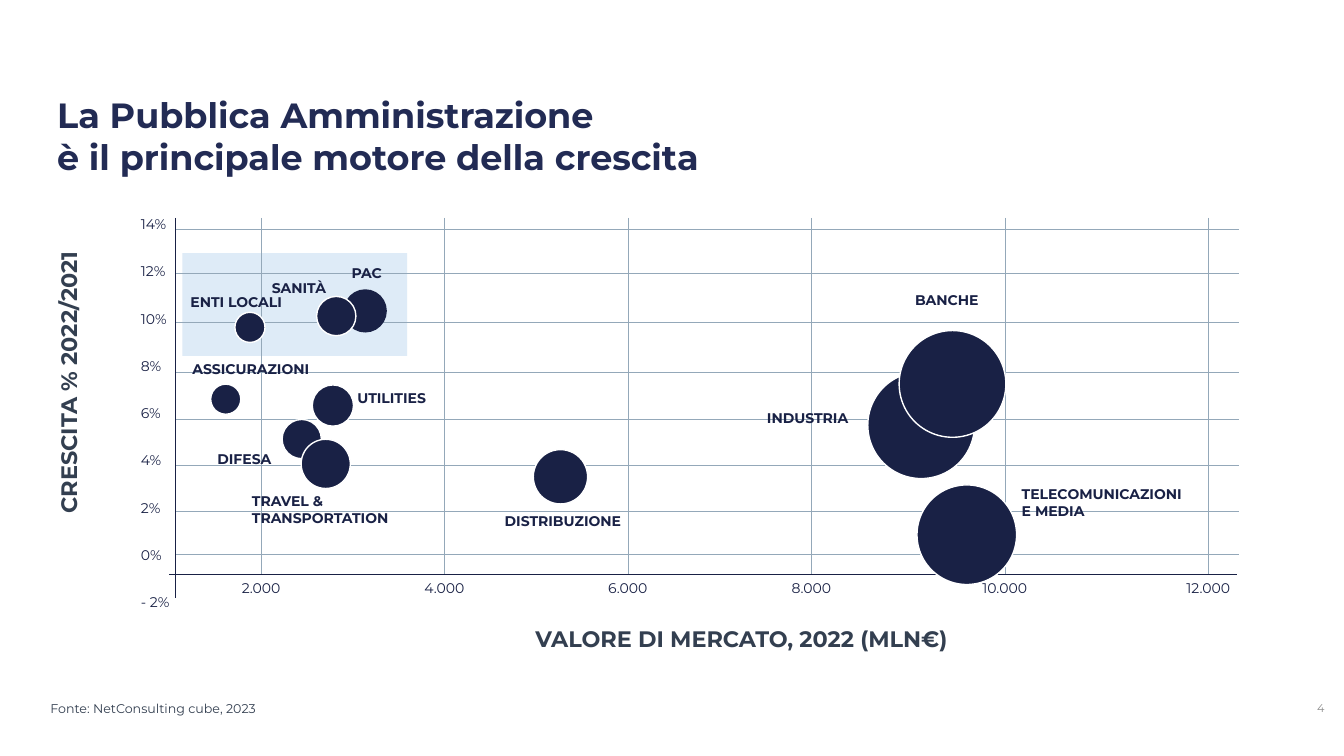
import pptx
import pptx.util
import pptx.dml.color
import pptx.enum.dml
import pptx.enum.shapes
import pptx.enum.text
from lxml import etree

Cm, Pt = pptx.util.Cm, pptx.util.Pt
RGBColor = pptx.dml.color.RGBColor
ALIGN = pptx.enum.text.PP_ALIGN
SHAPE = pptx.enum.shapes.MSO_SHAPE

NAVY = RGBColor(0x19, 0x21, 0x45)
INDIGO = RGBColor(0x22, 0x2B, 0x54)
SLATE = RGBColor(0x33, 0x3F, 0x50)
STEEL = RGBColor(0x94, 0xA8, 0xB9)
GRAY = RGBColor(0x8C, 0x8C, 0x8C)
PALE = RGBColor(0xDE, 0xEB, 0xF7)
WHITE = RGBColor(0xFF, 0xFF, 0xFF)
FONT = "Montserrat"

# All lengths in centimetres
TITLE = ["La Pubblica Amministrazione", "è il principale motore della crescita"]
SOURCE = "Fonte: NetConsulting cube, 2023"
PAGE = "4"
Y_NAME = "CRESCITA % 2022/2021"
X_NAME = "VALORE DI MERCATO, 2022 (MLN€)"

Y_TICKS = ["14%", "12%", "10%", "8%", "6%", "4%", "2%", "0%", "- 2%"]
Y_GRID = [5.77, 6.88, 8.13, 9.37, 10.57, 11.73, 12.88, 13.97]
X_TICKS = [("2.000", 6.58), ("4.000", 11.2), ("6.000", 15.82),
           ("8.000", 20.45), ("10.000", 25.32), ("12.000", 30.45)]

# Sector, label (left, top, width, height), bubble (left, top, diameter)
SECTORS = [
    ("PAC", (8.61, 6.55, 2.11, 0.69), (8.66, 7.29, 1.09)),
    ("SANITÀ", (6.6, 6.91, 2.11, 0.69), (7.98, 7.47, 0.99)),
    ("ENTI LOCALI", (4.55, 7.26, 3.23, 0.69), (5.92, 7.87, 0.76)),
    ("ASSICURAZIONI", (4.6, 8.97, 3.68, 0.69), (5.31, 9.68, 0.76)),
    ("UTILITIES", (8.76, 9.68, 2.79, 0.69), (7.87, 9.7, 1.04)),
    ("DIFESA", (5.23, 11.23, 2.11, 0.69), (7.11, 10.57, 0.99)),
    ("TRAVEL & TRANSPORTATION", (6.1, 12.29, 4.72, 1.12), (7.59, 11.07, 1.24)),
    ("DISTRIBUZIONE", (12.47, 12.78, 4.72, 0.69), (13.44, 11.33, 1.37)),
    ("INDUSTRIA", (19.08, 10.19, 2.97, 0.69), (21.87, 9.37, 2.69)),
    ("BANCHE", (22.81, 7.21, 2.41, 0.69), (22.66, 8.33, 2.69)),
    ("TELECOMUNICAZIONI E MEDIA", (25.5, 12.12, 4.83, 1.12), (23.11, 12.22, 2.51)),
]

LEFT, RIGHT = 4.42, 31.22
TOP, BASE = 5.49, 14.48
TICK_H, TICK_STEP = 0.69, 1.19

deck = pptx.Presentation()
deck.slide_width, deck.slide_height = Cm(33.87), Cm(19.05)
slide = deck.slides.add_slide(deck.slide_layouts[6])


def add_text(lines, area, size, color, bold=False, align=ALIGN.LEFT):
    box = slide.shapes.add_textbox(*map(Cm, area))
    frame = box.text_frame
    frame.word_wrap = True
    para = frame.paragraphs[0]
    para.alignment = align
    for i, line in enumerate(lines):
        if i:
            para.add_line_break()
        run = para.add_run()
        run.text = line
        font = run.font
        font.name, font.size, font.bold = FONT, Pt(size), bold
        font.color.rgb = color
    return box


def add_line(x1, y1, x2, y2, color, width, dotted=False):
    line = slide.shapes.add_connector(
        pptx.enum.shapes.MSO_CONNECTOR.STRAIGHT, *map(Cm, (x1, y1, x2, y2)))
    line.line.color.rgb = color
    line.line.width = Pt(width)
    if dotted:
        line.line.dash_style = pptx.enum.dml.MSO_LINE.ROUND_DOT
    etree.SubElement(line.element.spPr, pptx.oxml.ns.qn("a:effectLst"))


def add_form(kind, area, fill, edge=None):
    form = slide.shapes.add_shape(kind, *map(Cm, area))
    form.shadow.inherit = False
    form.fill.solid()
    form.fill.fore_color.rgb = fill
    if edge is None:
        form.line.fill.background()
    else:
        form.line.color.rgb = edge
        form.line.width = Pt(1)


add_text(TITLE, (1.19, 2.24, 27.86, 2.39), 25, INDIGO, True)
add_text([SOURCE], (1.02, 17.53, 11.71, 0.64), 9, SLATE)

# Public sector area, grid and axes
add_form(SHAPE.RECTANGLE, (4.6, 6.38, 5.66, 2.59), PALE)
for y in Y_GRID:
    add_line(RIGHT, y, LEFT, y, STEEL, 0.25, True)
for tick, x in X_TICKS:
    add_line(x, TOP, x, BASE, STEEL, 0.25, True)
add_line(LEFT, TOP, LEFT, 15.06, NAVY, 0.5)
add_line(31.17, BASE, 4.27, BASE, NAVY, 0.5)

name = add_text([Y_NAME], (-2.11, 9.17, 7.67, 0.94), 16, SLATE, True, ALIGN.CENTER)
name.rotation = 270
add_text([X_NAME], (11.02, 15.62, 15.34, 0.94), 16, SLATE, True, ALIGN.CENTER)

for i, tick in enumerate(Y_TICKS):
    add_text([tick], (3.3, 5.31 + i * TICK_STEP, 1.52, TICK_H), 10, NAVY)
for tick, x in X_TICKS:
    width = 2.03 if len(tick) > 5 else 1.52
    add_text([tick], (x - width / 2, BASE, width, TICK_H), 10, NAVY, align=ALIGN.CENTER)

for sector, area, bubble in SECTORS:
    add_text([sector], area, 10, NAVY, True)
for sector, area, (x, y, size) in SECTORS:
    edge = None if sector == "PAC" else WHITE
    add_form(SHAPE.OVAL, (x, y, size, size), NAVY, edge)

page = add_text([PAGE], (31.78, 17.32, 1.85, 1.02), 8, GRAY, align=ALIGN.RIGHT)
page.text_frame.vertical_anchor = pptx.enum.text.MSO_ANCHOR.MIDDLE

deck.save("out.pptx")
